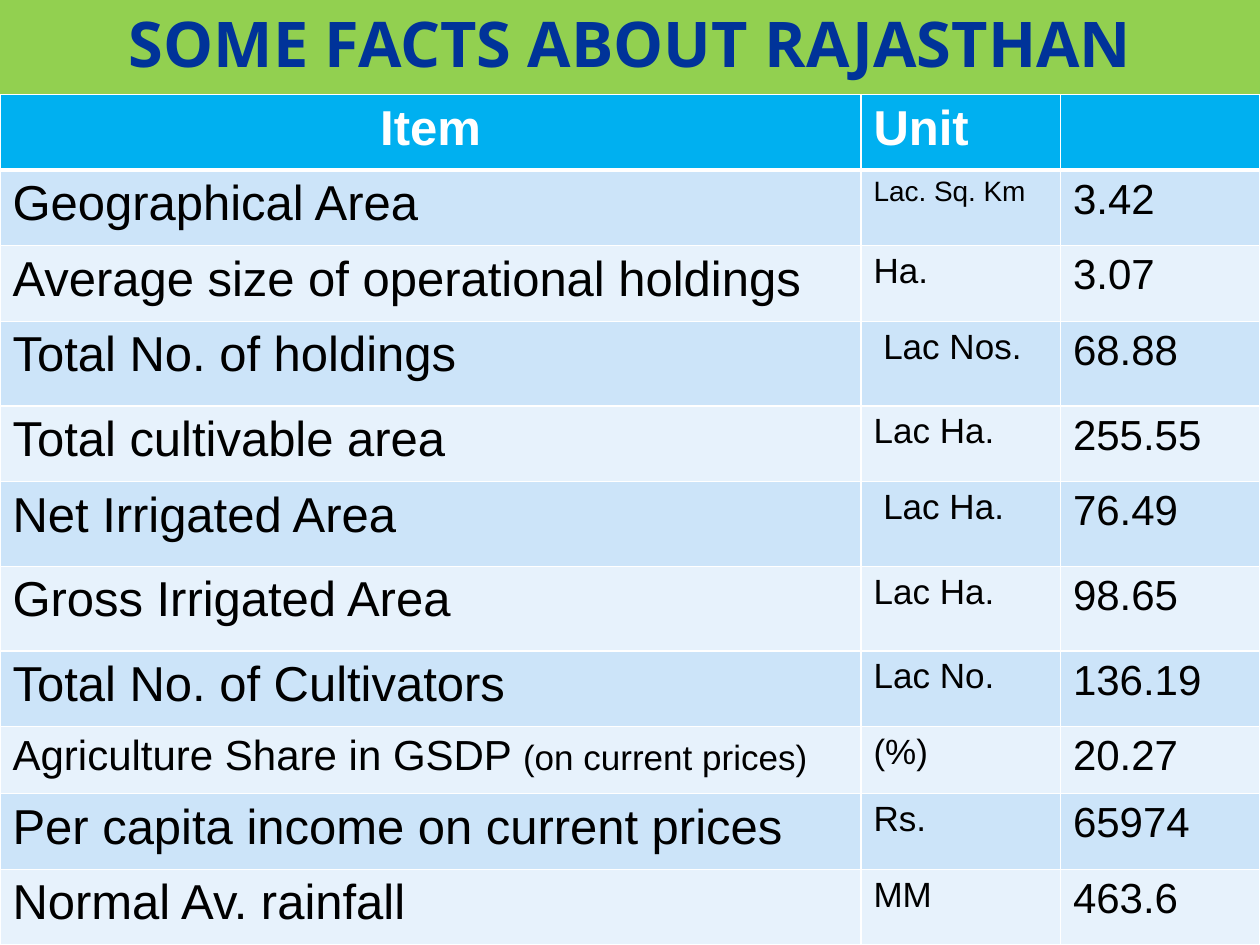
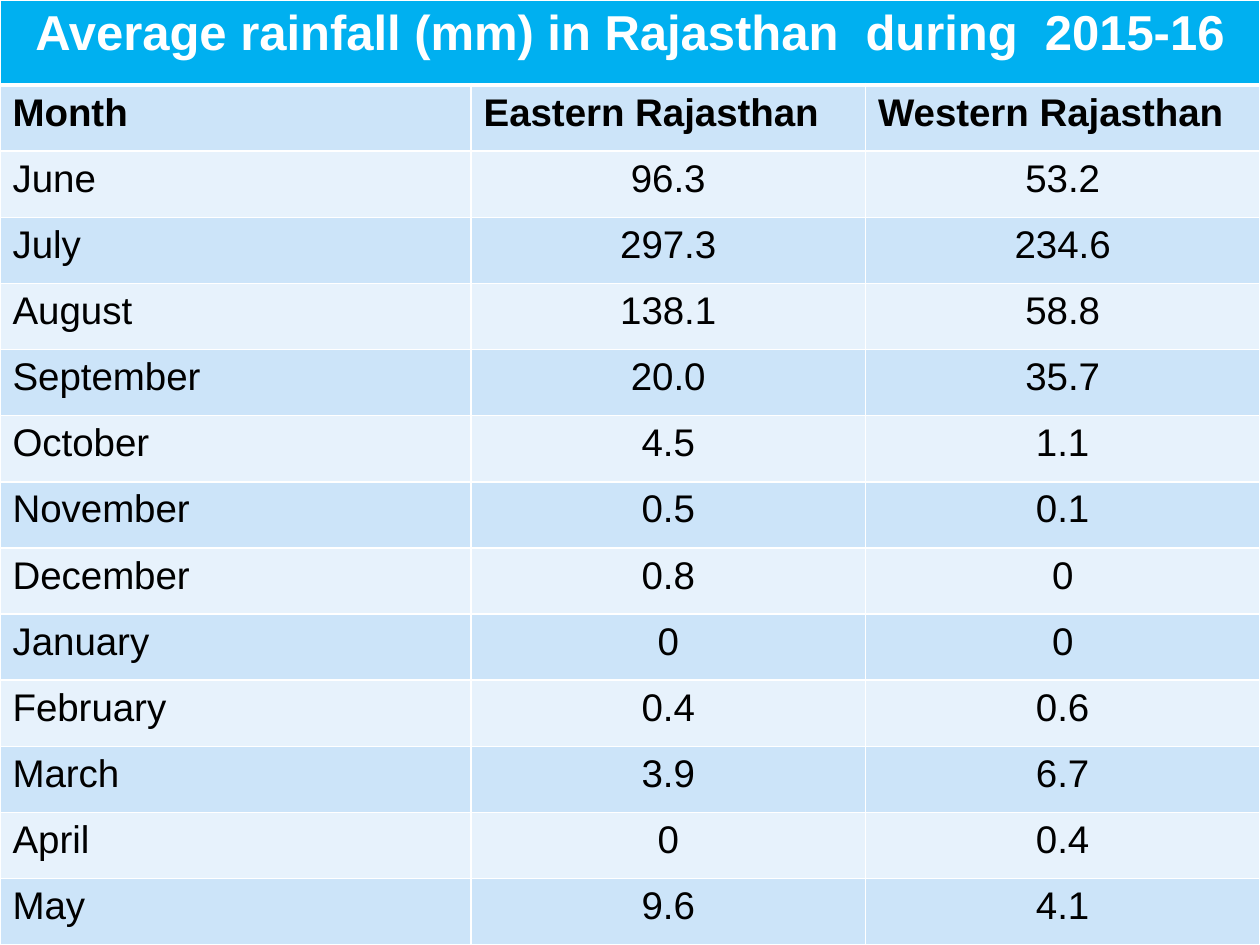
from lxml.etree import SubElement as Sub
from pptx import Presentation as Deck
from pptx.dml.color import RGBColor as Rgb
from pptx.enum.text import MSO_ANCHOR as Anchor, PP_ALIGN as Align
from pptx.oxml.ns import qn
from pptx.util import Pt

LEFT, MID = Align.LEFT, Align.CENTER

FACTS = [
    ("Geographical Area", ("Lac. Sq. Km", 16), "3.42"),
    ("Average size of operational holdings", "Ha.", "3.07"),
    ("Total No. of holdings", " Lac Nos.", "68.88"),
    ("Total cultivable area", "Lac Ha.", "255.55"),
    ("Net Irrigated Area", " Lac Ha.", "76.49"),
    ("Gross Irrigated Area", "Lac Ha.", "98.65"),
    ("Total No. of Cultivators", "Lac No.", "136.19"),
    ([("Agriculture Share in GSDP ", 24), ("(on current prices)", 20)],
     "(%)", "20.27"),
    ("Per capita income on current prices", "Rs.", "65974"),
    ("Normal Av. rainfall", "MM", "463.6"),
]

RAIN = [
    ("June", "96.3", "53.2"),
    ("July", "297.3", "234.6"),
    ("August", "138.1", "58.8"),
    ("September", "20.0", "35.7"),
    ("October", "4.5", "1.1"),
    ("November", "0.5", "0.1"),
    ("December", "0.8", "0"),
    ("January", "0", "0"),
    ("February", "0.4", "0.6"),
    ("March", "3.9", "6.7"),
    ("April", "0", "0.4"),
    ("May", "9.6", "4.1"),
]


def tint(code):
    return Rgb.from_string(code)


class Pen:
    back, head, line = "92D050", "00B0F0", "FFFFFF"
    bands = "E7F2FC", "CCE4F9"
    title_font = dict(name="Noto Sans", size=Pt(36), bold=True)
    cell_font = dict(name="Arial", bold=False)

    def __init__(self, deck):
        self.deck = deck
        self.slide = None

    def page(self):
        self.slide = self.deck.slides.add_slide(self.deck.slide_layouts[6])
        fill = self.slide.background.fill
        fill.solid()
        fill.fore_color.rgb = tint(self.back)

    def words(self, par, text, color, form):
        run = par.add_run()
        run.text = text
        for key, val in form.items():
            setattr(run.font, key, val)
        run.font.color.rgb = tint(color)

    def title(self, text):
        box = self.slide.shapes.add_textbox(Pt(36), Pt(0), Pt(648), Pt(48))
        frame = box.text_frame
        frame.word_wrap = True
        frame.vertical_anchor = Anchor.MIDDLE
        par = frame.paragraphs[0]
        par.alignment = MID
        self.words(par, text, "003399", self.title_font)

    def grid(self, top, cols, rows):
        table = self.slide.shapes.add_table(
            len(rows), len(cols), Pt(0), Pt(top),
            Pt(sum(cols)), Pt(sum(rows))).table
        for col, wide in zip(table.columns, cols):
            col.width = Pt(wide)
        for num, (row, high) in enumerate(zip(table.rows, rows)):
            row.height = Pt(high)
            for cell in row.cells:
                cell.fill.solid()
                shade = self.bands[num % 2] if num else self.head
                cell.fill.fore_color.rgb = tint(shade)
                self.edge(cell, 3 if num == 1 else 1, 1 if num else 3)
        return table

    def edge(self, cell, top, base):
        props = cell._tc.get_or_add_tcPr()
        sides = dict(L=1, R=1, T=top, B=base)
        for spot, (side, wide) in enumerate(sides.items()):
            line = Sub(props, qn(f"a:ln{side}"), w=str(Pt(wide)))
            fill = Sub(line, qn("a:solidFill"))
            Sub(fill, qn("a:srgbClr"), val=self.line)
            props.insert(spot, line)

    def fill(self, table, num, texts, sizes, aligns, color="000000", bold=False):
        for col, (text, size, align) in enumerate(zip(texts, sizes, aligns)):
            par = table.cell(num, col).text_frame.paragraphs[0]
            par.alignment = align
            runs = text if isinstance(text, list) else [text]
            for run in runs:
                word, pts = run if isinstance(run, tuple) else (run, size)
                if word:
                    form = self.cell_font | dict(size=Pt(pts), bold=bold)
                    self.words(par, word, color, form)


def facts(pen):
    pen.page()
    pen.title("SOME FACTS ABOUT RAJASTHAN")
    mid, tall, low = 43.2, 48.4, 38.4
    rows = [mid] * 3 + [tall, mid, tall, tall, mid, low, mid, mid]
    table = pen.grid(54, [492, 114, 114], rows)
    pen.fill(table, 0, ("Item", "Unit", ""), [28] * 3, [MID, LEFT, LEFT],
             "FFFFFF", True)
    for num, texts in enumerate(FACTS, 1):
        pen.fill(table, num, texts, [28, 20, 24], [LEFT] * 3)


def rain(pen):
    pen.page()
    rows = [48.6] + [37.8] * (len(RAIN) + 1)
    table = pen.grid(0, [269.2, 225.4, 225.4], rows)
    table.cell(0, 0).merge(table.cell(0, 2))
    pen.fill(table, 0, ["Average rainfall (mm) in Rajasthan  during  2015-16"],
             [28], [MID], "FFFFFF", True)
    sizes = [22] * 3
    heads = "Month", "Eastern Rajasthan", "Western Rajasthan"
    pen.fill(table, 1, heads, sizes, [LEFT] * 3, bold=True)
    for num, texts in enumerate(RAIN, 2):
        pen.fill(table, num, texts, sizes, [LEFT, MID, MID])


def main():
    deck = Deck()
    deck.slide_width, deck.slide_height = Pt(720), Pt(540)
    pen = Pen(deck)
    facts(pen)
    rain(pen)
    deck.save("out.pptx")


if __name__ == "__main__":
    main()
